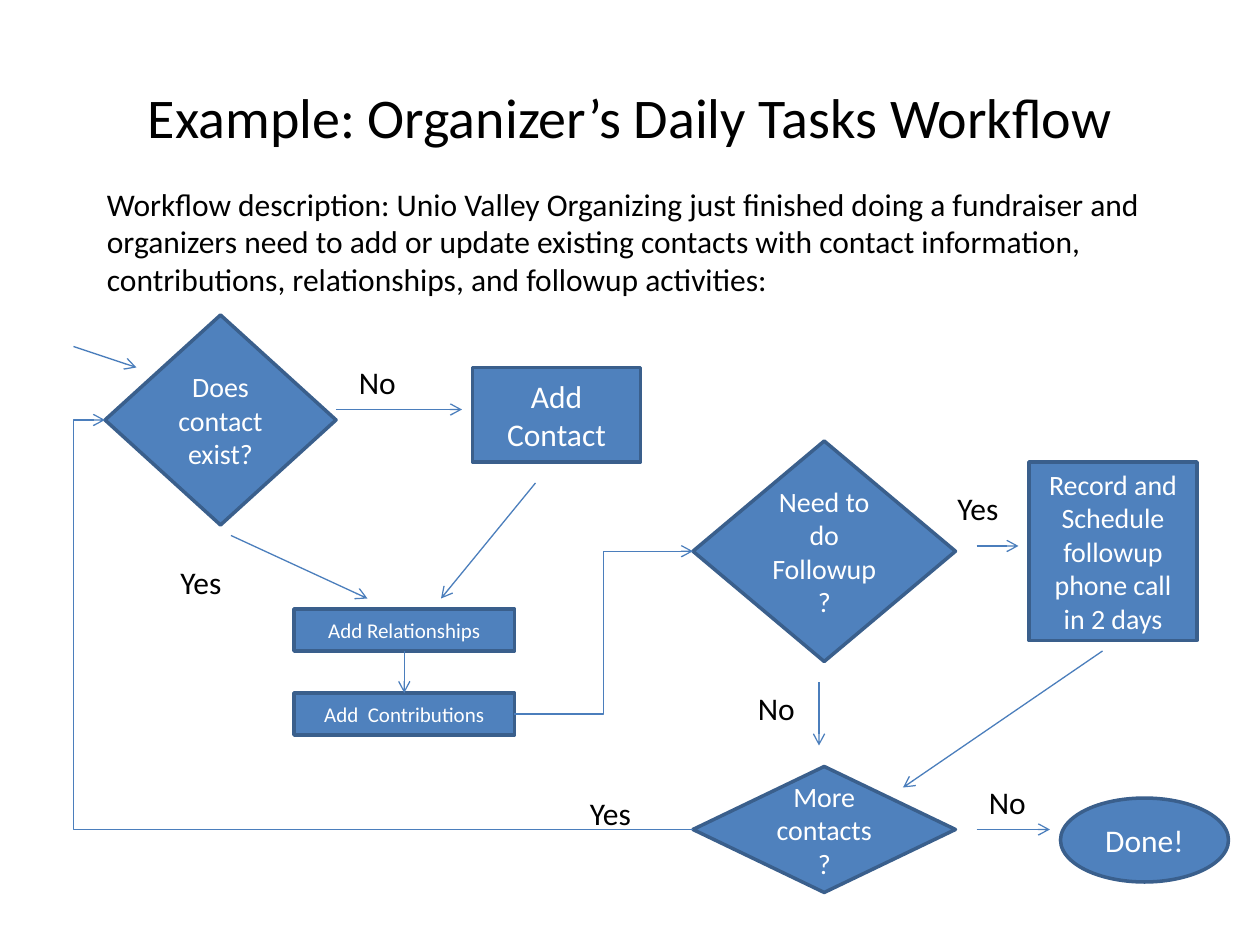
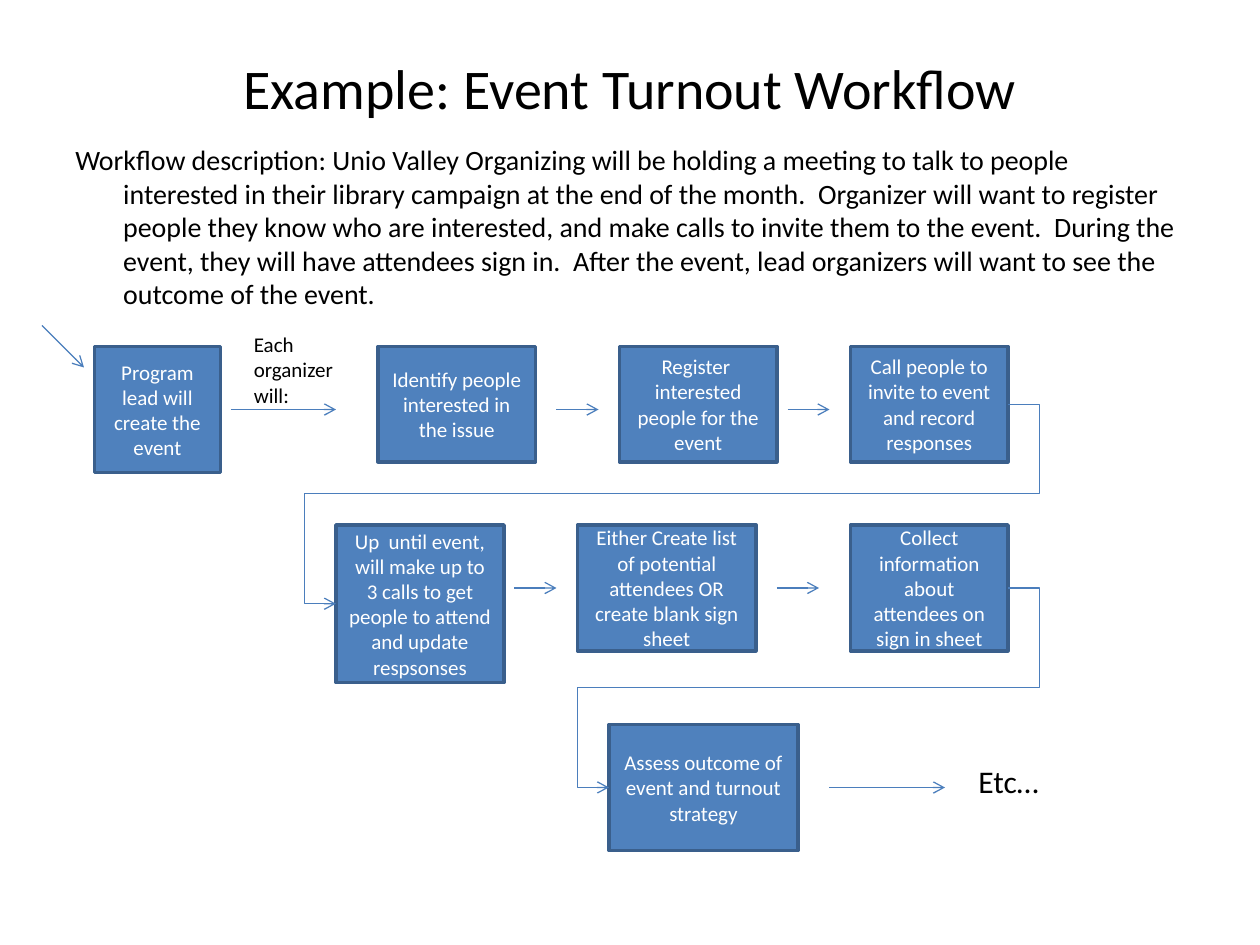
from lxml.etree import SubElement
from pptx import Presentation
from pptx.dml.color import RGBColor
from pptx.enum.shapes import MSO_CONNECTOR as LINK, MSO_SHAPE as SHAPE
from pptx.enum.text import MSO_ANCHOR as ANCHOR, MSO_AUTO_SIZE as FIT, PP_ALIGN as ALIGN
from pptx.oxml.ns import qn
from pptx.util import Inches, Pt

# Shared look; all places are columns and rows of a 120 x 90 grid
COLORS = {"fill": "4F81BD", "border": "3A5F8C", "arrow": "4B7EBC",
          "ink": "000000", "paper": "FFFFFF"}
FONT = "Calibri"
WIDTH, HEIGHT = 10, 7.5
COLUMNS = 120
CELL = WIDTH / COLUMNS
TITLE_LEFT, TITLE_TOP, TITLE_WIDTH = 6, 3.6, 108

# Steps: text, outline, (column, row, columns, rows), size
# Labels: text, (column, row, columns, rows), size, wrap
# Arrows: start, end, then the column, row, column ... where it turns
DAILY_TASKS = {
    "title": "Example: Organizer’s Daily Tasks Workflow",
    "title_rows": 15,
    "description": "Workflow description: Unio Valley Organizing just finished doing a "
                   "fundraiser and organizers need to add or update existing contacts with "
                   "contact information, contributions, relationships, and followup activities:",
    "description_place": (9, 17, 104, 12.1),
    "description_format": {"size": 18},
    "steps": [
        ("Does contact exist?", SHAPE.DIAMOND, (10, 30, 22, 20), 16),
        ("Add Contact", SHAPE.RECTANGLE, (45, 35, 16, 9), 18),
        ("Add Relationships", SHAPE.RECTANGLE, (28, 58, 21, 4), 12),
        ("Add  Contributions", SHAPE.RECTANGLE, (28, 66, 21, 4), 12),
        ("Need to do Followup?", SHAPE.DIAMOND, (66, 42, 25, 21), 16),
        ("Record and Schedule followup phone call in 2 days", SHAPE.RECTANGLE,
         (98, 44, 16, 17), 16),
        ("More contacts?", SHAPE.DIAMOND, (66, 73, 25, 12), 16),
        ("Done!", SHAPE.OVAL, (101, 76, 16, 8), 18),
    ],
    "labels": [
        ("No", (33, 34, 6, 4.8), 18, False),
        ("Yes", (16, 53, 6.4, 4.8), 18, False),
        ("No", (71, 65, 6, 4.8), 18, False),
        ("Yes", (90, 46, 6.4, 4.8), 18, False),
        ("Yes", (55, 75, 6.4, 4.8), 18, False),
        ("No", (93, 74, 6, 4.8), 18, False),
    ],
    "arrows": [
        ((7, 33), (13, 35)),
        ((32, 39), (44, 39)),
        ((22, 51), (35, 57)),
        ((51, 46), (42, 57)),
        ((38.5, 62), (38.5, 66)),
        ((49, 68), (66, 52.5), 57.5),
        ((93, 52), (97, 52)),
        ((78, 65), (78, 71)),
        ((105, 62), (86, 75)),
        ((93, 79), (100, 79)),
        ((66, 79), (10, 40), 7),
    ],
}

EVENT_TURNOUT = {
    "title": "Example: Event Turnout Workflow",
    "title_rows": 9.4,
    "description": "Workflow description: Unio Valley Organizing will be holding a meeting to "
                   "talk to people interested in their library campaign at the end of the "
                   "month.  Organizer will want to register people they know who are "
                   "interested, and make calls to invite them to the event.  During the event, "
                   "they will have attendees sign in.  After the event, lead organizers will "
                   "want to see the outcome of the event.",
    "description_place": (6, 13, 108, 18),
    "description_format": {"size": 16, "hanging": 0.38, "before": 3.2, "fit": FIT.NONE},
    "steps": [
        (text, SHAPE.RECTANGLE, place, 12) for text, place in [
            ("Program lead will create the event", (9, 33, 12, 12)),
            ("Identify people interested in the issue", (36, 33, 15, 11)),
            ("Register  interested people for the event", (59, 33, 15, 11)),
            ("Call people to invite to event and record responses", (81, 33, 15, 11)),
            ("Up  until event, will make up to 3 calls to get people to attend and "
             "update respsonses", (32, 50, 16, 15)),
            ("Either Create list of potential attendees OR create blank sign sheet",
             (55, 50, 17, 12)),
            ("Collect information about attendees on sign in sheet", (81, 50, 15, 12)),
            ("Assess outcome of event and turnout strategy", (58, 69, 18, 12)),
        ]
    ],
    "labels": [
        ("Each organizer will:", (23, 31, 10, 8.5), 12, True),
        ("Etc…", (92, 72, 12, 5), 18, True),
    ],
    "arrows": [
        ((4, 31), (8, 35)),
        ((22, 39), (32, 39)),
        ((53, 39), (57, 39)),
        ((75, 39), (79, 39)),
        ((96, 38.5), (32, 57.5), 99, 47, 29),
        ((49, 56), (53, 56)),
        ((74, 56), (78, 56)),
        ((96, 56), (58, 75), 99, 65.5, 55),
        ((79, 75), (90, 75)),
    ],
}


def grid(*cells):
    return [Inches(cell * CELL) for cell in cells]


def rgb(name):
    return RGBColor.from_string(COLORS[name])


def write(holder, text, *, size, color="ink", align=ALIGN.LEFT, anchor=ANCHOR.TOP,
          wrap=True, fit=FIT.NONE, hanging=0, before=0):
    frame = holder.text_frame
    frame.word_wrap, frame.auto_size, frame.vertical_anchor = wrap, fit, anchor
    paragraph = frame.paragraphs[0]
    paragraph.alignment, paragraph.space_before = align, Pt(before)
    if hanging:
        properties = paragraph._p.get_or_add_pPr()
        properties.set("marL", str(Inches(hanging)))
        properties.set("indent", str(-Inches(hanging)))
    run = paragraph.add_run()
    run.text = text
    run.font.name, run.font.size = FONT, Pt(size)
    run.font.color.rgb = rgb(color)


def add_title(slide, text, rows):
    title = slide.shapes.title
    title.left, title.top, title.width, title.height = grid(
        TITLE_LEFT, TITLE_TOP, TITLE_WIDTH, rows)
    write(title, text, size=32, align=ALIGN.CENTER, anchor=ANCHOR.MIDDLE)


def add_label(slide, text, place, **style):
    label = slide.shapes.add_textbox(*grid(*place))
    write(label, text, **{"fit": FIT.SHAPE_TO_FIT_TEXT, **style})


def add_step(slide, text, outline, place, size):
    step = slide.shapes.add_shape(outline, *grid(*place))
    step.shadow.inherit = False
    step.fill.solid()
    step.fill.fore_color.rgb = rgb("fill")
    step.line.color.rgb = rgb("border")
    step.line.width = Pt(2)
    write(step, text, size=size, color="paper", align=ALIGN.CENTER, anchor=ANCHOR.MIDDLE)


def add_arrow(slide, start, end, *turns):
    kind = LINK.ELBOW if turns else LINK.STRAIGHT
    arrow = slide.shapes.add_connector(kind, *grid(*start, *end))
    arrow.line.color.rgb = rgb("arrow")
    arrow.line.width = Pt(0.75)
    SubElement(arrow.line._get_or_add_ln(), qn("a:tailEnd"), type="arrow")
    properties = arrow._element.spPr
    SubElement(properties, qn("a:effectLst"))
    if turns:
        # Each turn is a share of the run from start to end, across then down in turn
        geometry = properties.find(qn("a:prstGeom"))
        geometry.set("prst", f"bentConnector{len(turns) + 2}")
        guides = geometry.find(qn("a:avLst"))
        for index, turn in enumerate(turns):
            axis = index % 2
            share = (turn - start[axis]) / (end[axis] - start[axis])
            SubElement(guides, qn("a:gd"), name=f"adj{index + 1}",
                       fmla=f"val {round(share * 100000)}")


def add_workflow(deck, workflow):
    slide = deck.slides.add_slide(deck.slide_layouts[5])
    add_title(slide, workflow["title"], workflow["title_rows"])
    add_label(slide, workflow["description"], workflow["description_place"],
              **workflow["description_format"])
    for step in workflow["steps"]:
        add_step(slide, *step)
    for arrow in workflow["arrows"]:
        add_arrow(slide, *arrow)
    for text, place, size, wrap in workflow["labels"]:
        add_label(slide, text, place, size=size, wrap=wrap)


def main():
    deck = Presentation()
    deck.slide_width, deck.slide_height = Inches(WIDTH), Inches(HEIGHT)
    for workflow in (DAILY_TASKS, EVENT_TURNOUT):
        add_workflow(deck, workflow)
    deck.save("out.pptx")


if __name__ == "__main__":
    main()
